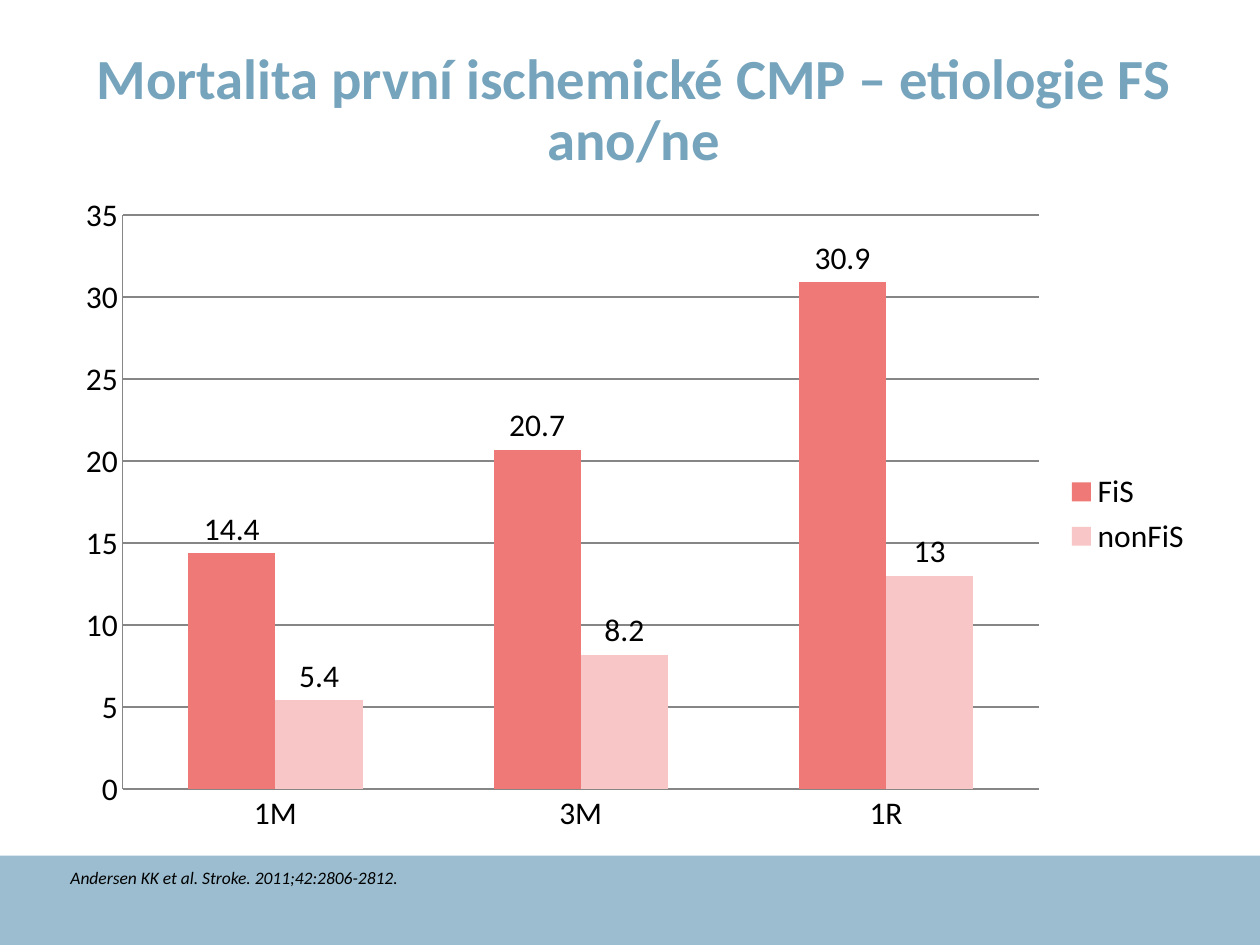
from pptx import Presentation
from pptx.chart.data import CategoryChartData
from pptx.dml.color import RGBColor
from pptx.enum.chart import XL_CHART_TYPE, XL_LABEL_POSITION, XL_LEGEND_POSITION, XL_TICK_MARK
from pptx.enum.shapes import MSO_SHAPE
from pptx.enum.text import MSO_ANCHOR, PP_ALIGN
from pptx.util import Inches, Pt

# Content
TITLE = "Mortalita první ischemické CMP – etiologie FS ano/ne"
CITATION = "Andersen KK et al. Stroke. 2011;42:2806-2812."
PERIODS = ["1M", "3M", "1R"]
BLUE = RGBColor(0x76, 0xA4, 0xBD)
LIGHT_BLUE = RGBColor(0x9B, 0xBD, 0xCF)
RED = RGBColor(0xEE, 0x79, 0x76)
PINK = RGBColor(0xF9, 0xC6, 0xC8)
GRAY = RGBColor(0x86, 0x86, 0x86)
BLACK = RGBColor(0, 0, 0)
MORTALITY = [
    ("FiS", [14.4, 20.7, 30.9], RED),
    ("nonFiS", [5.4, 8.2, 13], PINK),
]
FONT = "Calibri"
LEFT, WIDTH = Inches(0.5), Inches(9.06)
BAND_TOP = Inches(6.79)


def add_text(slide, text, top, width, height, size, color, anchor, align):
    box = slide.shapes.add_textbox(LEFT, top, width, height)
    frame = box.text_frame
    frame.word_wrap = True
    frame.vertical_anchor = anchor
    frame.margin_left = frame.margin_right = Inches(0.06)
    frame.margin_top = frame.margin_bottom = Inches(0.03)
    paragraph = frame.paragraphs[0]
    paragraph.text = text
    paragraph.alignment = align
    paragraph.line_spacing = 0.9
    paragraph.font.name = FONT
    paragraph.font.size = Pt(size)
    paragraph.font.color.rgb = color
    return paragraph


presentation = Presentation()
presentation.slide_width, presentation.slide_height = Inches(10), Inches(7.5)
slide = presentation.slides.add_slide(presentation.slide_layouts[6])

# Footer band
band = slide.shapes.add_shape(MSO_SHAPE.RECTANGLE, 0, BAND_TOP, presentation.slide_width,
                              presentation.slide_height - BAND_TOP)
band.shadow.inherit = False
band.fill.solid()
band.fill.fore_color.rgb = LIGHT_BLUE
band.line.fill.background()

# Title
title = add_text(slide, TITLE, Inches(0.55), WIDTH, Inches(0.67), 32.4, BLUE,
                 MSO_ANCHOR.MIDDLE, PP_ALIGN.CENTER)
title.font.bold = True

# Mortality chart
chart_data = CategoryChartData()
chart_data.categories = PERIODS
for name, values, _ in MORTALITY:
    chart_data.add_series(name, values)
chart = slide.shapes.add_chart(XL_CHART_TYPE.COLUMN_CLUSTERED, LEFT, Inches(1.45),
                               WIDTH, Inches(5.26), chart_data).chart
chart.has_title = False
chart.font.name = FONT
chart.font.size = Pt(18)
chart.font.color.rgb = BLACK
chart.has_legend = True
chart.legend.position = XL_LEGEND_POSITION.RIGHT
chart.legend.include_in_layout = False

value_axis = chart.value_axis
value_axis.minimum_scale, value_axis.maximum_scale, value_axis.major_unit = 0, 35, 5
value_axis.has_major_gridlines = True
value_axis.major_gridlines.format.line.color.rgb = GRAY
for axis in (chart.category_axis, value_axis):
    axis.major_tick_mark = axis.minor_tick_mark = XL_TICK_MARK.NONE
    axis.format.line.color.rgb = GRAY

plot = chart.plots[0]
plot.gap_width = 150
plot.overlap = 0
plot.vary_by_categories = False
for series, (_, _, color) in zip(plot.series, MORTALITY):
    series.format.fill.solid()
    series.format.fill.fore_color.rgb = color
    series.data_labels.show_value = True
    series.data_labels.position = XL_LABEL_POSITION.OUTSIDE_END

# Citation
citation = add_text(slide, CITATION, Inches(6.87), Inches(3.7), Inches(0.55), 10, BLACK,
                    MSO_ANCHOR.TOP, PP_ALIGN.LEFT)
citation.font.italic = True

presentation.save("out.pptx")
